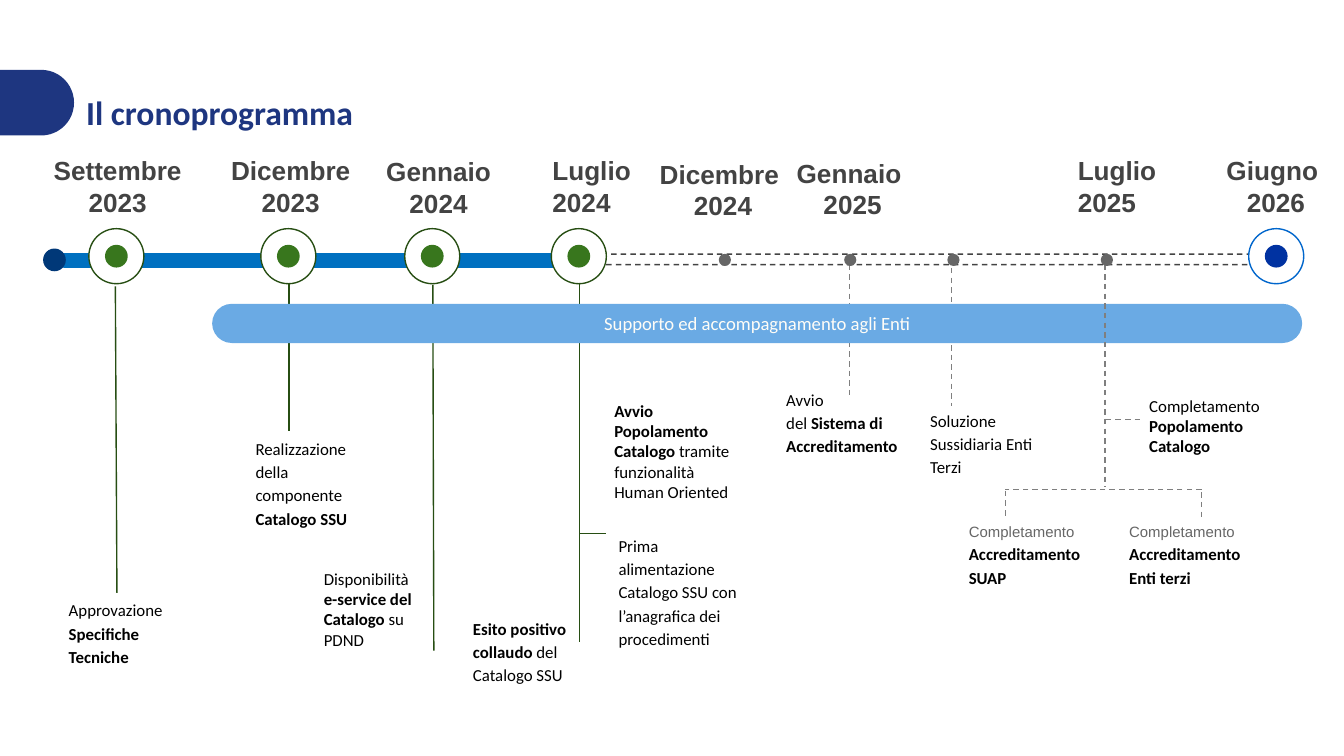
from lxml import etree
from pptx import Presentation
from pptx import util as u
from pptx.dml.color import RGBColor
from pptx.enum import dml, shapes, text
from pptx.oxml.ns import qn

GREEN, DOT_GREEN, DARK_GREY = "274E13", "38761D", "434343"
DASH_GREY, MID_GREY = "7F7F7F", "666666"
LEFT, CENTER = text.PP_ALIGN.LEFT, text.PP_ALIGN.CENTER


def color(hex_value):
    return RGBColor.from_string(hex_value)


def bold(words):
    return words, {"bold": True}


def small_grey(words):
    return words, {"size": 8, "font": "Arial", "hue": MID_GREY}


def write(shape, paragraphs, size=9, font="Calibri", hue="000000", bold=False,
          align=LEFT, spacing=None, inset=0.23, anchor=text.MSO_ANCHOR.TOP):
    """Each paragraph is a list of runs: plain text or (text, overrides)."""
    frame = shape.text_frame
    frame.word_wrap = True
    frame.vertical_anchor = anchor
    frame.margin_left = frame.margin_right = u.Cm(inset)
    frame.margin_top = frame.margin_bottom = u.Cm(inset)
    base = {"size": size, "font": font, "hue": hue, "bold": bold}
    for index, runs in enumerate(paragraphs):
        paragraph = frame.add_paragraph() if index else frame.paragraphs[0]
        paragraph.alignment = align
        if spacing:
            paragraph.line_spacing = spacing
        for item in runs:
            words, changes = (item, {}) if isinstance(item, str) else item
            style = {**base, **changes}
            run = paragraph.add_run()
            run.text = words
            run.font.size = u.Pt(style["size"])
            run.font.name = style["font"]
            run.font.bold = style["bold"]
            run.font.color.rgb = color(style["hue"])


def add_text(slide, left, top, width, height, paragraphs, **style):
    box = slide.shapes.add_textbox(u.Cm(left), u.Cm(top), u.Cm(width), u.Cm(height))
    write(box, paragraphs, **style)


def add_figure(slide, kind, left, top, width, height, fill=None, line=None, dashed=False):
    shape = slide.shapes.add_shape(kind, u.Cm(left), u.Cm(top), u.Cm(width), u.Cm(height))
    shape.shadow.inherit = False
    if fill:
        shape.fill.solid()
        shape.fill.fore_color.rgb = color(fill)
    else:
        shape.fill.background()
    if line:
        shape.line.color.rgb = color(line)
        shape.line.width = u.Pt(0.75)
        if dashed:
            shape.line.dash_style = dml.MSO_LINE.DASH
    else:
        shape.line.fill.background()
    return shape


def add_pill(slide, *box, **style):
    pill = add_figure(slide, shapes.MSO_SHAPE.ROUNDED_RECTANGLE, *box, **style)
    pill.adjustments[0] = 0.5
    return pill


def add_circle(slide, x, y, diameter, **style):
    add_figure(slide, shapes.MSO_SHAPE.OVAL, x - diameter / 2, y - diameter / 2,
               diameter, diameter, **style)


def add_milestone(slide, x, ring, dot):
    add_circle(slide, x, 4.84, 1.04, fill="FFFFFF", line=ring)
    add_circle(slide, x, 4.84, 0.43, fill=dot)


def add_line(slide, x1, y1, x2, y2, hue=GREEN):
    line = slide.shapes.add_connector(shapes.MSO_CONNECTOR.STRAIGHT,
                                      u.Cm(x1), u.Cm(y1), u.Cm(x2), u.Cm(y2))
    line.line.color.rgb = color(hue)
    line.line.width = u.Pt(0.75)
    if hue == DASH_GREY:
        line.line.dash_style = dml.MSO_LINE.DASH
    properties = line._element.find(qn("p:spPr"))
    etree.SubElement(properties, qn("a:effectLst"))


def add_dates(slide):
    dates = [
        (0.28, 2.69, 3.89, ["Settembre 2023"], {}),
        (3.63, 2.69, 3.73, ["Dicembre 2023"], {}),
        (6.6, 2.69, 3.38, ["Gennaio 2024"], {"inset": 0.25}),
        (10.21, 2.69, 3.28, ["Luglio", "2024"], {"align": LEFT}),
        (11.94, 2.69, 3.45, ["Dicembre ", "2024"], {"inset": 0.3}),
        (14.25, 2.74, 3.73, ["Gennaio ", "2025"], {}),
        (20.14, 2.69, 3.28, ["Luglio", "2025"], {"align": LEFT}),
        (22.25, 2.69, 3.73, ["Giugno ", "2026"], {}),
    ]
    for left, top, width, lines, changes in dates:
        style = {"size": 14, "font": "Arial", "hue": DARK_GREY, "bold": True,
                 "align": CENTER, **changes}
        add_text(slide, left, top, width, 1.6, [[line] for line in lines], **style)


def add_descriptions(slide):
    # Loosely spaced notes
    loose = [
        (1.07, 11.05, 2.62, 2.13,
         [["Approvazione ", bold("Specifiche Tecniche")]], 0.23),
        (4.6, 8, 2.62, 2.13,
         [["Realizzazione"], ["della componente"], [bold("Catalogo SSU")]], 0.23),
        (8.71, 11.4, 2.79, 1.7,
         [[bold("Esito positivo collaudo"), " del Catalogo SSU"]], 0.23),
        (11.56, 9.93, 2.87, 2.46,
         [["Prima alimentazione Catalogo SSU con l’anagrafica dei procedimenti"]], 0.13),
        (14.63, 7.07, 2.79, 2.58,
         [["Avvio"], ["del ", bold("Sistema di Accreditamento")]], 0.23),
        (17.25, 7.37, 2.77, 2.01, [["Soluzione Sussidiaria Enti Terzi"]], 0.33),
    ]
    for left, body in ((18.08, "SUAP"), (21.11, "Enti terzi")):
        paragraphs = [[small_grey("Completamento"), bold(" Accreditamento")], [bold(body)]]
        loose.append((left, 9.55, 2.79, 1.91, paragraphs, 0.23))
    for *box, paragraphs, inset in loose:
        add_text(slide, *box, paragraphs, inset=inset, spacing=1.15)

    # Tightly spaced notes
    add_text(slide, 5.87, 10.49, 2.34, 1.93,
             [["Disponibilità ", bold("e-service del Catalogo"), " su PDND"]], inset=0.25)
    add_text(slide, 11.43, 7.39, 2.62, 2.64,
             [[bold("Avvio Popolamento")], [bold("Catalogo "), "tramite"],
              ["funzionalità"], ["Human Oriented"]], inset=0.18)
    add_text(slide, 21.54, 7.29, 2.62, 1.57,
             [["Completamento", bold(" Popolamento")], [bold("Catalogo")]], inset=0.18)


def main():
    presentation = Presentation()
    presentation.slide_width, presentation.slide_height = u.Cm(25.4), u.Cm(14.28)
    slide = presentation.slides.add_slide(presentation.slide_layouts[6])

    # Title and side tab
    add_pill(slide, -1.04, 1.32, 2.44, 1.24, fill="1E3680")
    add_text(slide, 1.63, 1.5, 20, 1.24, [["Il cronoprogramma"]], size=18, hue="1E3680",
             bold=True, inset=0, anchor=text.MSO_ANCHOR.MIDDLE)

    # Lines that pass behind the support bar
    for line in ((2.18, 5.41, 2.21, 11.2), (5.46, 5.33, 5.46, 8.15),
                 (8.18, 5.38, 8.2, 12.29), (10.95, 4.8, 10.95, 12.12),
                 (10.95, 10.08, 11.46, 10.08)):
        add_line(slide, *line)
    add_line(slide, 16.05, 5, 16.05, 7.47, DASH_GREY)
    add_line(slide, 17.98, 4.88, 17.98, 7.67, DASH_GREY)

    # Time axis: planned part, completed part, milestones
    add_pill(slide, 8.51, 4.8, 15.82, 0.2, line=DARK_GREY, dashed=True)
    add_pill(slide, 1.07, 4.78, 10.08, 0.28, fill="0070C0")
    add_circle(slide, 1.03, 4.91, 0.43, fill="003878")
    for x in (2.2, 5.45, 8.17, 10.94):
        add_milestone(slide, x, GREEN, DOT_GREEN)
    add_milestone(slide, 24.12, "0066CC", "0032A1")

    # Support bar
    support = add_pill(slide, 4.01, 5.74, 20.6, 0.74, fill="6AAAE4")
    write(support, [["Supporto ed accompagnamento agli Enti"]], size=10, hue="FFFDF7",
          align=CENTER, anchor=text.MSO_ANCHOR.MIDDLE)

    # July 2025 branches
    for line in ((20.88, 5, 20.88, 9.19), (20.9, 7.92, 21.54, 7.92),
                 (22.71, 9.25, 19, 9.25), (19, 9.27, 19, 9.78),
                 (22.71, 9.3, 22.71, 9.83)):
        add_line(slide, *line, DASH_GREY)
    for x in (13.7, 16.07, 18.02, 20.92):
        add_circle(slide, x, 4.91, 0.23, fill=MID_GREY)

    add_dates(slide)
    add_descriptions(slide)
    presentation.save("out.pptx")


if __name__ == "__main__":
    main()
